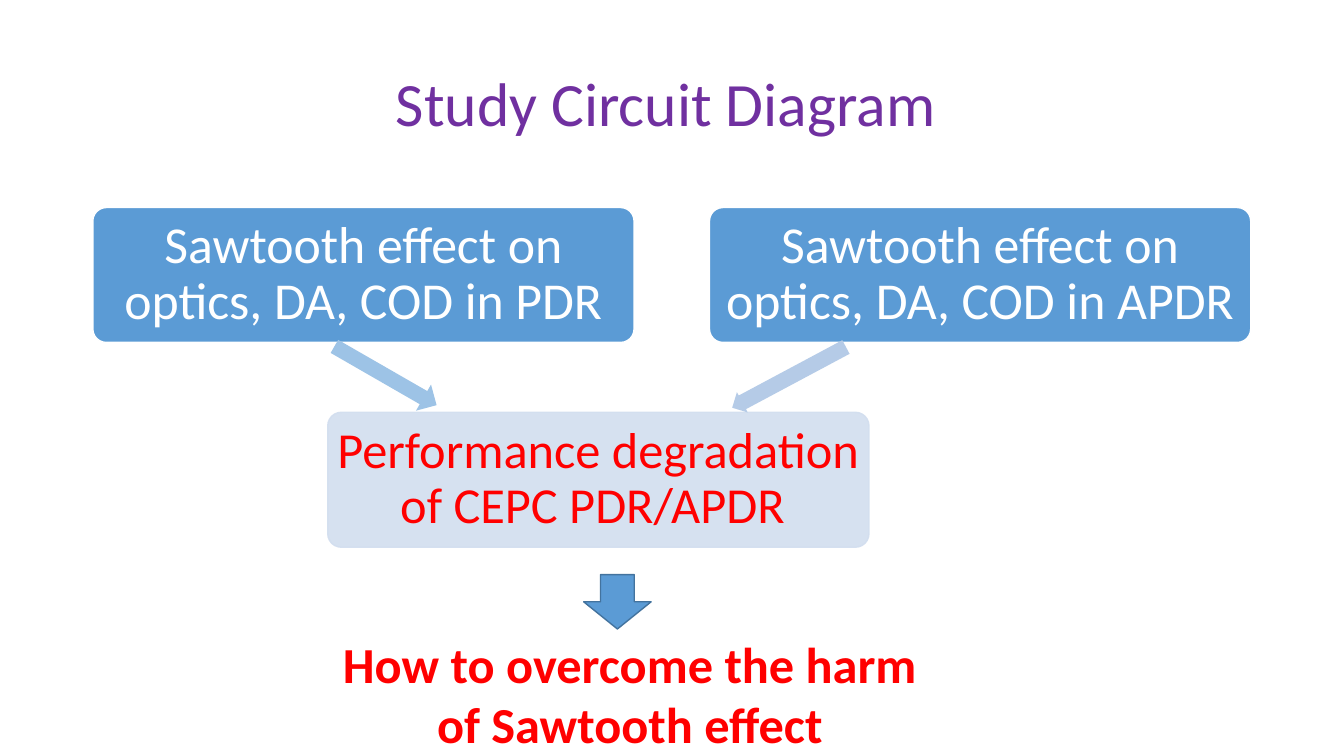
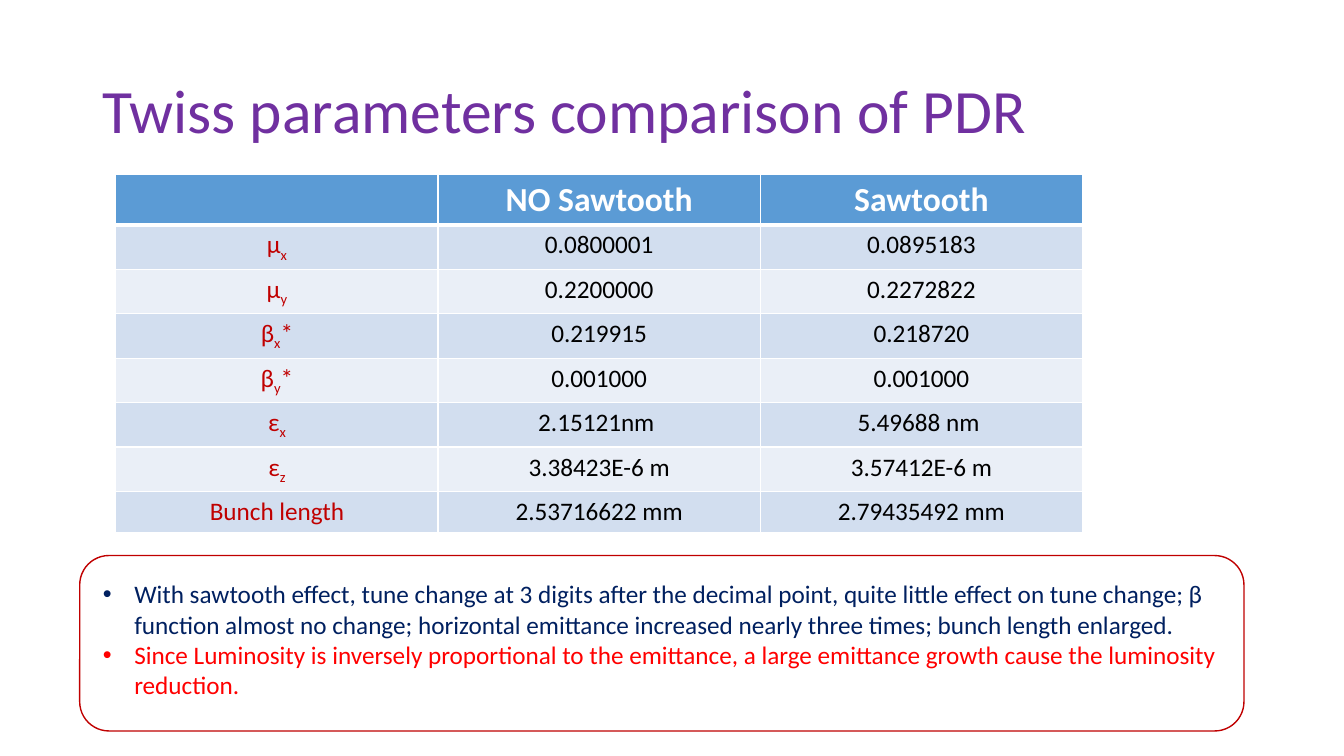
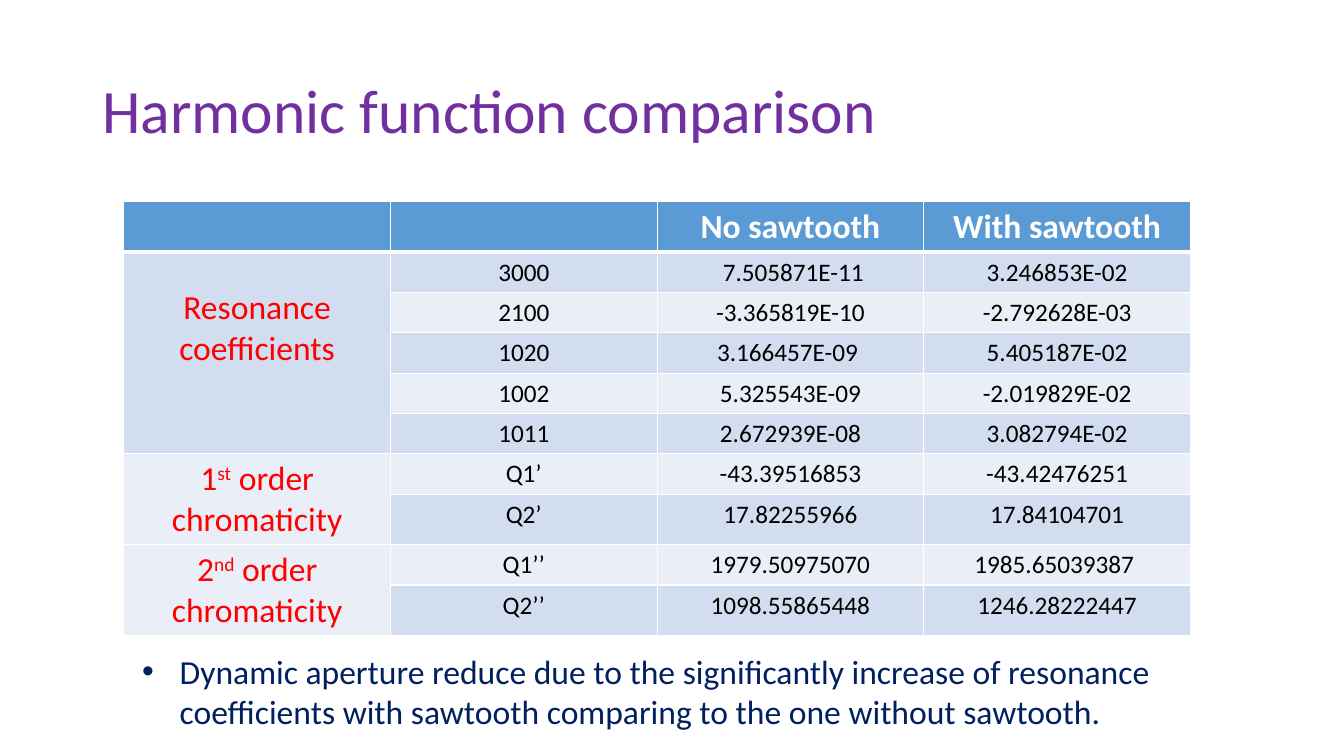
"""Build three slides on the sawtooth effect in PDR and APDR."""
from lxml.etree import SubElement
from pptx import Presentation
from pptx.dml.color import RGBColor
from pptx.enum.shapes import MSO_SHAPE as SHAPE
from pptx.enum.text import MSO_ANCHOR as ANCHOR, PP_ALIGN as ALIGN
from pptx.oxml.ns import qn
from pptx.util import Cm, Pt

FONT = "Calibri"
PURPLE = RGBColor(0x70, 0x30, 0xA0)
BLUE = RGBColor(0x5B, 0x9B, 0xD5)
DARK_BLUE = RGBColor(0x43, 0x73, 0x9E)
SKY = RGBColor(0x9D, 0xC3, 0xE6)
PERIWINKLE = RGBColor(0xB5, 0xCB, 0xE7)
BAND = RGBColor(0xD2, 0xDE, 0xEF)
PALE_BAND = RGBColor(0xEA, 0xEF, 0xF7)
NAVY = RGBColor(0x00, 0x20, 0x60)
RED = RGBColor(0xFF, 0x00, 0x00)
DARK_RED = RGBColor(0xC0, 0x00, 0x00)
WHITE = RGBColor(0xFF, 0xFF, 0xFF)
BLACK = RGBColor(0x00, 0x00, 0x00)


def write(frame, text, size=18, color=BLACK, bold=False, align=ALIGN.LEFT,
          spacing=1.0, script=-25000, bullet_indent=None):
    """Add one paragraph; text between bars is raised or lowered by script."""
    paragraph = frame.add_paragraph() if frame.text else frame.paragraphs[0]
    frame.word_wrap = True
    paragraph.alignment = align
    paragraph.line_spacing = spacing
    if bullet_indent:
        properties = paragraph._p.get_or_add_pPr()
        properties.set("marL", str(bullet_indent))
        properties.set("indent", str(-bullet_indent))
        SubElement(properties, qn("a:buFont"), typeface="Arial")
        SubElement(properties, qn("a:buChar"), char="•")
    for index, part in enumerate(text.split("|")):
        run = paragraph.add_run()
        run.text = part
        run.font.name, run.font.size = FONT, Pt(size)
        run.font.bold, run.font.color.rgb = bold, color
        if index % 2:
            run.font._element.set("baseline", str(script))


def add_grid(slide, left, top, column_width, row_height, rows, label_format):
    """Add a banded table whose first column holds the labels."""
    columns = len(rows[0])
    grid = slide.shapes.add_table(
        len(rows), columns, Cm(left), Cm(top),
        Cm(column_width * columns), Cm(row_height * len(rows))).table
    for r, row in enumerate(rows):
        for c, text in enumerate(row):
            cell = grid.cell(r, c)
            properties = cell._tc.get_or_add_tcPr()
            for side in "LRTB":
                thick = (r, side) in ((0, "B"), (1, "T"))
                edge = SubElement(properties, qn(f"a:ln{side}"), w=str(Pt(3 if thick else 1)))
                paint = SubElement(edge, qn("a:solidFill"))
                SubElement(paint, qn("a:srgbClr"), val=str(WHITE))
            cell.fill.solid()
            cell.fill.fore_color.rgb = BLUE if r == 0 else BAND if r % 2 else PALE_BAND
            if r == 0:
                style = dict(size=24, color=WHITE, bold=True)
            else:
                style = label_format if c == 0 else {}
            if text:
                write(cell.text_frame, text, align=ALIGN.CENTER, **style)
    return grid


deck = Presentation()
deck.slide_width, deck.slide_height = Cm(33.87), Cm(19.05)

slides = []
for title, left, top, width, height, anchor, spacing in (
    ("Study Circuit Diagram", 9.73, 1.5, 20.5, 2.13, ANCHOR.TOP, 1.0),
    ("Twiss parameters comparison of PDR", 2.33, 1.01, 29.21, 3.68, ANCHOR.MIDDLE, 0.9),
    ("Harmonic function comparison", 2.33, 1.01, 29.21, 3.68, ANCHOR.MIDDLE, 0.9),
):
    slide = deck.slides.add_slide(deck.slide_layouts[6])
    heading = slide.shapes.add_textbox(Cm(left), Cm(top), Cm(width), Cm(height)).text_frame
    heading.vertical_anchor = anchor
    write(heading, title, size=44, color=PURPLE, spacing=spacing)
    slides.append(slide)
diagram, twiss, harmonic = slides

for text, left, top, fill, line, color, size in (
    ("Sawtooth effect on optics, DA, COD in PDR", 2.34, 5.23, BLUE, WHITE, WHITE, 37),
    ("Sawtooth effect on optics, DA, COD in APDR", 17.88, 5.23, BLUE, WHITE, WHITE, 37),
    ("Performance degradation of CEPC PDR/APDR ", 8.26, 10.39, BAND, BAND, RED, 36),
):
    step = diagram.shapes.add_shape(
        SHAPE.ROUNDED_RECTANGLE, Cm(left), Cm(top), Cm(13.64), Cm(3.4))
    step.adjustments[0] = 0.1
    step.shadow.inherit = False
    step.fill.solid()
    step.fill.fore_color.rgb = fill
    step.line.color.rgb, step.line.width = line, Pt(1)
    frame = step.text_frame
    frame.margin_left = frame.margin_right = frame.margin_top = frame.margin_bottom = Cm(0.13)
    frame.vertical_anchor = ANCHOR.MIDDLE
    write(frame, text, size=size, color=color, align=ALIGN.CENTER, spacing=0.9)
    if fill == BAND:
        for paint in step._element.spPr.iter(qn("a:srgbClr")):
            SubElement(paint, qn("a:alpha"), val="90000")

for kind, left, top, width, height, turn, shaft, fill, line in (
    (SHAPE.RIGHT_ARROW, 18.26, 9.22, 3.25, 0.58, 151.9, 0.67, PERIWINKLE, None),
    (SHAPE.RIGHT_ARROW, 8.23, 9.09, 2.97, 0.76, 29.9, 0.5, SKY, None),
    (SHAPE.DOWN_ARROW, 14.71, 14.48, 1.7, 1.37, 0, 0.5, BLUE, DARK_BLUE),
):
    arrow = diagram.shapes.add_shape(kind, Cm(left), Cm(top), Cm(width), Cm(height))
    arrow.rotation = turn
    arrow.adjustments[0] = shaft
    arrow.shadow.inherit = False
    arrow.fill.solid()
    arrow.fill.fore_color.rgb = fill
    if line:
        arrow.line.color.rgb, arrow.line.width = line, Pt(1)
    else:
        arrow.line.fill.background()

question = diagram.shapes.add_textbox(Cm(8.05), Cm(15.82), Cm(15.65), Cm(3.33))
write(question.text_frame, "How to overcome the harm of Sawtooth effect",
      size=36, color=RED, bold=True, align=ALIGN.CENTER)

add_grid(twiss, 2.92, 4.39, 8.12, 1.03, (
    ("", "NO Sawtooth", "Sawtooth"),
    ("μ|x", "0.0800001", "0.0895183"),
    ("μ|y", "0.2200000", "0.2272822"),
    ("β|x|*", "0.219915", "0.218720"),
    ("β|y|*", "0.001000", "0.001000"),
    ("ε|x", "2.15121nm ", "5.49688 nm "),
    ("ε|z", "3.38423E-6 m", "3.57412E-6 m"),
    ("Bunch length", "2.53716622 mm", "2.79435492 mm"),
), dict(color=DARK_RED))

findings = twiss.shapes.add_shape(
    SHAPE.ROUNDED_RECTANGLE, Cm(2.01), Cm(14), Cm(29.34), Cm(4.42))
findings.shadow.inherit = False
findings.fill.background()
findings.line.color.rgb, findings.line.width = DARK_RED, Pt(1)
frame = findings.text_frame
frame.vertical_anchor = ANCHOR.TOP
frame.margin_left = frame.margin_top = Cm(0.37)
frame.margin_right = Cm(0.27)
for text, color in (
    ("With sawtooth effect, tune change at 3 digits after the decimal point, quite little "
     "effect on tune change; β function almost no change; horizontal emittance increased "
     "nearly three times; bunch length enlarged.", NAVY),
    ("Since Luminosity is inversely proportional to the emittance, a large emittance growth "
     "cause the luminosity reduction.", RED),
):
    write(frame, text, color=color, bullet_indent=Cm(0.79))

coefficients = add_grid(harmonic, 3.12, 5.08, 6.72, 0.86, (
    ("", "", "No sawtooth", "With sawtooth"),
    ("Resonance coefficients", "3000", " 7.505871E-11", "3.246853E-02"),
    ("", "2100", "-3.365819E-10", "-2.792628E-03"),
    ("", "1020", "3.166457E-09 ", "5.405187E-02"),
    ("", "1002", "5.325543E-09", "-2.019829E-02"),
    ("", "1011", "2.672939E-08", "3.082794E-02"),
    ("1|st| order chromaticity", "Q1’", "-43.39516853", "-43.42476251"),
    ("", "Q2’", "17.82255966", "17.84104701"),
    ("2|nd| order chromaticity", "Q1’’", "1979.50975070", "1985.65039387 "),
    ("", "Q2’’", "1098.55865448", "1246.28222447"),
), dict(size=24, color=RED, script=30000))
for first, last in ((1, 5), (6, 7), (8, 9)):
    coefficients.cell(first, 0).merge(coefficients.cell(last, 0))
coefficients.cell(1, 0).margin_top = Cm(0.89)

conclusion = harmonic.shapes.add_textbox(Cm(3.33), Cm(16.28), Cm(28.45), Cm(2.31))
write(conclusion.text_frame,
      "Dynamic aperture reduce due to the significantly increase of resonance coefficients "
      "with sawtooth comparing to the one without sawtooth.",
      size=24, color=NAVY, bullet_indent=Cm(0.95))

deck.save("out.pptx")
